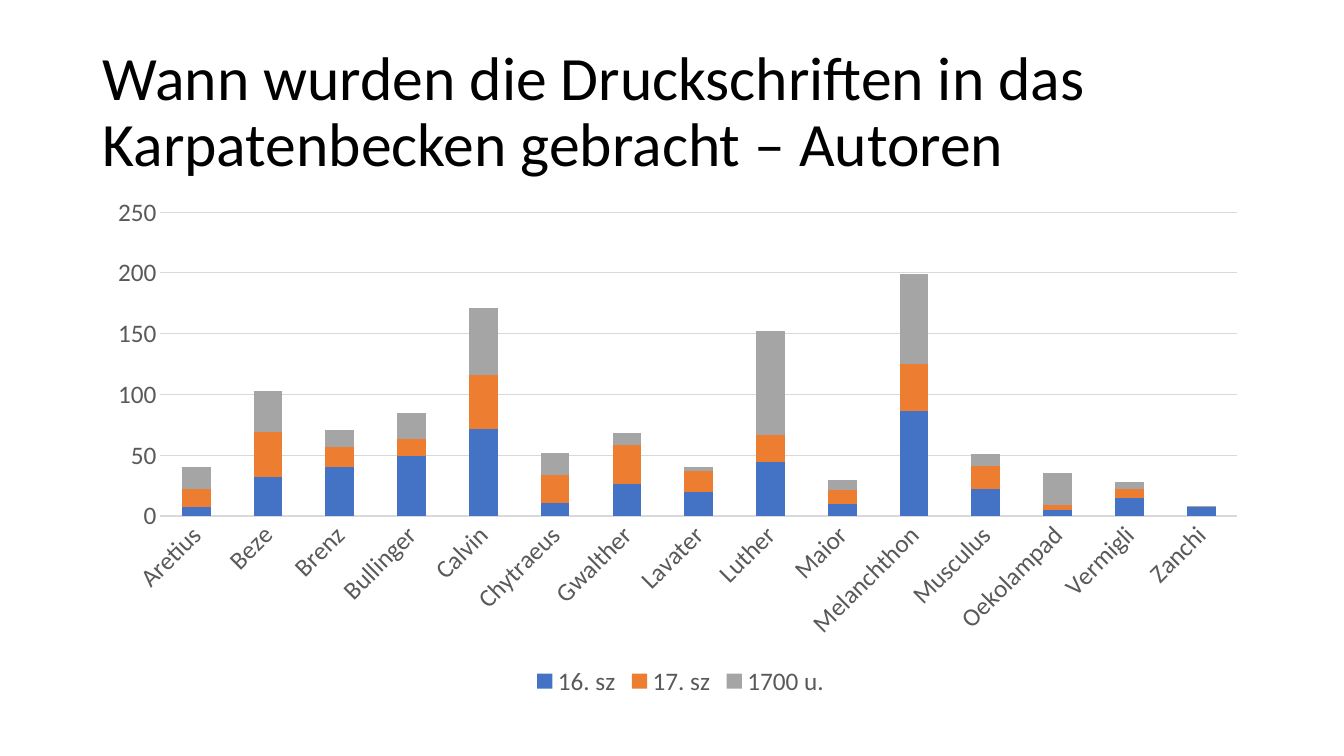
from dataclasses import dataclass

from lxml.etree import SubElement
from pptx import Presentation
from pptx.chart.axis import _BaseAxis
from pptx.chart.chart import Chart
from pptx.chart.data import CategoryChartData
from pptx.dml.color import RGBColor
from pptx.enum.chart import XL_CHART_TYPE, XL_LEGEND_POSITION, XL_TICK_MARK
from pptx.enum.text import MSO_ANCHOR
from pptx.oxml.ns import qn
from pptx.slide import Slide
from pptx.text.text import Font
from pptx.util import Inches, Pt


@dataclass(frozen=True)
class Theme:
    font: str = "Calibri"
    title_size: int = 44
    chart_size: int = 18
    title: str = "000000"
    label: str = "595959"
    grid: str = "D9D9D9"
    grid_width: float = 0.75


@dataclass(frozen=True)
class Period:
    name: str
    color: str
    counts: tuple[int, ...]


THEME = Theme()
TITLE = "Wann wurden die Druckschriften in das Karpatenbecken gebracht – Autoren"
AUTHORS = (
    "Aretius", "Beze", "Brenz", "Bullinger", "Calvin",
    "Chytraeus", "Gwalther", "Lavater", "Luther", "Maior",
    "Melanchthon", "Musculus", "Oekolampad", "Vermigli", "Zanchi",
)
PERIODS = (
    Period("16. sz", "4472C4", (7, 32, 40, 49, 72, 11, 26, 20, 44, 10, 86, 22, 5, 15, 7)),
    Period("17. sz", "ED7D31", (15, 37, 17, 14, 44, 23, 32, 17, 23, 11, 39, 19, 4, 7, 0)),
    Period("1700 u.", "A5A5A5", (18, 34, 14, 22, 55, 18, 10, 3, 85, 9, 74, 10, 26, 6, 1)),
)
PLOT_AREA = {"x": 0.07, "y": 0.05, "w": 0.89, "h": 0.59}
LABEL_ANGLE = -45


def set_font(font: Font, size: int, color: str) -> None:
    font.name = THEME.font
    font.size = Pt(size)
    font.color.rgb = RGBColor.from_string(color)


def add_title(s: Slide) -> None:
    tf = s.shapes.add_textbox(Inches(0.92), Inches(0.4), Inches(11.5), Inches(1.45)).text_frame
    tf.word_wrap = True
    tf.vertical_anchor = MSO_ANCHOR.MIDDLE
    p = tf.paragraphs[0]
    p.text = TITLE
    p.line_spacing = 0.9
    set_font(p.font, THEME.title_size, THEME.title)


def style_axis(axis: _BaseAxis) -> None:
    axis.major_tick_mark = XL_TICK_MARK.NONE
    axis.minor_tick_mark = XL_TICK_MARK.NONE
    set_font(axis.tick_labels.font, THEME.chart_size, THEME.label)


def place_plot_area(chart: Chart) -> None:
    plot_area = chart.element.find(".//" + qn("c:plotArea"))
    for old in plot_area.findall(qn("c:layout")):
        plot_area.remove(old)
    layout = SubElement(plot_area, qn("c:layout"))
    plot_area.insert(0, layout)
    manual = SubElement(layout, qn("c:manualLayout"))
    settings = {"layoutTarget": "inner", "xMode": "edge", "yMode": "edge", **PLOT_AREA}
    for tag, value in settings.items():
        SubElement(manual, qn(f"c:{tag}")).set("val", str(value))


def add_authors_chart(s: Slide) -> None:
    data = CategoryChartData()
    data.categories = AUTHORS
    for period in PERIODS:
        data.add_series(period.name, period.counts)
    chart = s.shapes.add_chart(
        XL_CHART_TYPE.COLUMN_STACKED,
        Inches(0.75), Inches(1.85), Inches(12), Inches(5.11), data,
    ).chart
    set_font(chart.font, THEME.chart_size, THEME.title)
    chart.has_title = False
    chart.has_legend = True
    chart.legend.position = XL_LEGEND_POSITION.BOTTOM
    chart.legend.include_in_layout = False
    set_font(chart.legend.font, THEME.chart_size, THEME.label)

    plot = chart.plots[0]
    plot.gap_width = 150
    plot.overlap = 100
    plot.vary_by_categories = False
    for series, period in zip(plot.series, PERIODS):
        series.format.fill.solid()
        series.format.fill.fore_color.rgb = RGBColor.from_string(period.color)

    authors, counts = chart.category_axis, chart.value_axis
    for axis in (authors, counts):
        style_axis(axis)
    counts.minimum_scale, counts.maximum_scale, counts.major_unit = 0, 250, 50
    counts.has_major_gridlines = True
    counts.format.line.fill.background()
    for line in (authors.format.line, counts.major_gridlines.format.line):
        line.color.rgb = RGBColor.from_string(THEME.grid)
        line.width = Pt(THEME.grid_width)
    body = chart.element.find(f".//{qn('c:catAx')}/{qn('c:txPr')}/{qn('a:bodyPr')}")
    body.set("rot", str(LABEL_ANGLE * 60000))
    place_plot_area(chart)


def main() -> None:
    prs = Presentation()
    prs.slide_width, prs.slide_height = Inches(13.33), Inches(7.5)
    s = prs.slides.add_slide(prs.slide_layouts[6])
    add_title(s)
    add_authors_chart(s)
    prs.save("out.pptx")


if __name__ == "__main__":
    main()
